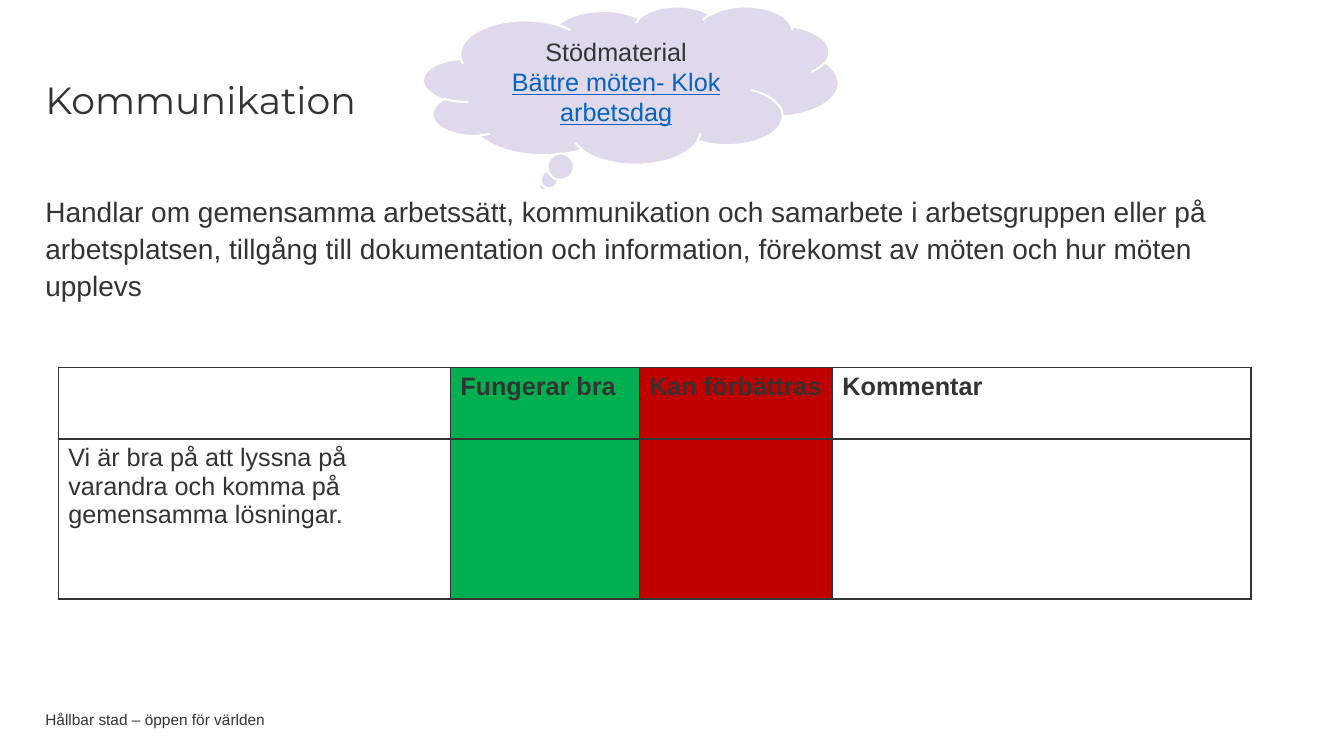
from lxml.etree import SubElement
from pptx import Presentation
from pptx.dml.color import RGBColor
from pptx.enum.shapes import MSO_SHAPE
from pptx.enum.text import MSO_ANCHOR, PP_ALIGN
from pptx.oxml.ns import qn
from pptx.util import Pt

COLORS = {"text": "333333", "good": "00B050", "improve": "C00000",
          "cloud": "E0D9EC", "outline": "FFFFFF", "link": "0563C1"}


def rgb(name):
    return RGBColor.from_string(COLORS[name])


def write(p, text, size=18, font="Arial", color="text", bold=False,
          underline=False, align=PP_ALIGN.LEFT, spacing=None):
    p.alignment = align
    if spacing:
        p.line_spacing = spacing
    r = p.add_run()
    r.text = text
    r.font.size = Pt(size)
    r.font.name = font
    r.font.bold = bold
    r.font.underline = underline
    r.font.color.rgb = rgb(color)


def add_text(s, box, text, anchor=MSO_ANCHOR.TOP, **fmt):
    tf = s.shapes.add_textbox(*map(Pt, box)).text_frame
    tf.word_wrap = True
    tf.vertical_anchor = anchor
    tf.margin_left = tf.margin_right = tf.margin_top = tf.margin_bottom = 0
    write(tf.paragraphs[0], text, **fmt)


def set_borders(cell, width=1):
    tc_pr = cell._tc.get_or_add_tcPr()
    for i, side in enumerate(("lnL", "lnR", "lnT", "lnB")):
        ln = tc_pr.makeelement(qn(f"a:{side}"), {"w": str(Pt(width))})
        fill = SubElement(ln, qn("a:solidFill"))
        SubElement(fill, qn("a:srgbClr"), val=COLORS["text"])
        tc_pr.insert(i, ln)


def add_assessment(s, box):
    columns = [("", 280, None), ("Fungerar bra", 135, "good"),
               ("Kan förbättras", 138, "improve"), ("Kommentar", 299, None)]
    statement = "Vi är bra på att lyssna på varandra och komma på gemensamma lösningar."
    rows = [(51.3, [c[0] for c in columns]), (114.3, [statement, "", "", ""])]
    table = s.shapes.add_table(len(rows), len(columns), *map(Pt, box)).table
    table.first_row = table.horz_banding = False
    for col, (_, width, _) in zip(table.columns, columns):
        col.width = Pt(width)
    for i, (height, texts) in enumerate(rows):
        table.rows[i].height = Pt(height)
        for j, text in enumerate(texts):
            cell = table.cell(i, j)
            color = columns[j][2]
            if color:
                cell.fill.solid()
                cell.fill.fore_color.rgb = rgb(color)
            else:
                cell.fill.background()
            set_borders(cell)
            if text:
                write(cell.text_frame.paragraphs[0], text, bold=i == 0)


def add_cloud(s, box):
    sp = s.shapes.add_shape(MSO_SHAPE.CLOUD_CALLOUT, *map(Pt, box))
    sp.adjustments[0], sp.adjustments[1] = -0.21, 0.64
    sp.shadow.inherit = False
    sp.fill.solid()
    sp.fill.fore_color.rgb = rgb("cloud")
    sp.line.color.rgb = rgb("outline")
    sp.line.width = Pt(1.5)
    tf = sp.text_frame
    tf.word_wrap = True
    tf.vertical_anchor = MSO_ANCHOR.MIDDLE
    write(tf.paragraphs[0], "Stödmaterial", align=PP_ALIGN.CENTER)
    write(tf.add_paragraph(), "Bättre möten- Klok arbetsdag", color="link",
          underline=True, align=PP_ALIGN.CENTER)


def build_slide(prs):
    s = prs.slides.add_slide(prs.slide_layouts[6])
    left = 32.4
    add_text(s, (left, 508.3, 680, 11.5), "Hållbar stad – öppen för världen",
             anchor=MSO_ANCHOR.MIDDLE, size=11)
    add_text(s, (left, 54, 260, 38), "Kommunikation", anchor=MSO_ANCHOR.MIDDLE,
             size=27, font="Montserrat", spacing=0.9)
    add_text(s, (left, 136.8, 837.4, 90),
             "Handlar om gemensamma arbetssätt, kommunikation och samarbete i "
             "arbetsgruppen eller på arbetsplatsen, tillgång till dokumentation "
             "och information, förekomst av möten och hur möten upplevs",
             size=20, spacing=1.1)
    add_assessment(s, (41.6, 262.3, 852, 165.6))
    add_cloud(s, (302.4, 4.3, 296.6, 113))


def main():
    prs = Presentation()
    prs.slide_width, prs.slide_height = Pt(960), Pt(540)
    build_slide(prs)
    prs.save("out.pptx")


if __name__ == "__main__":
    main()
